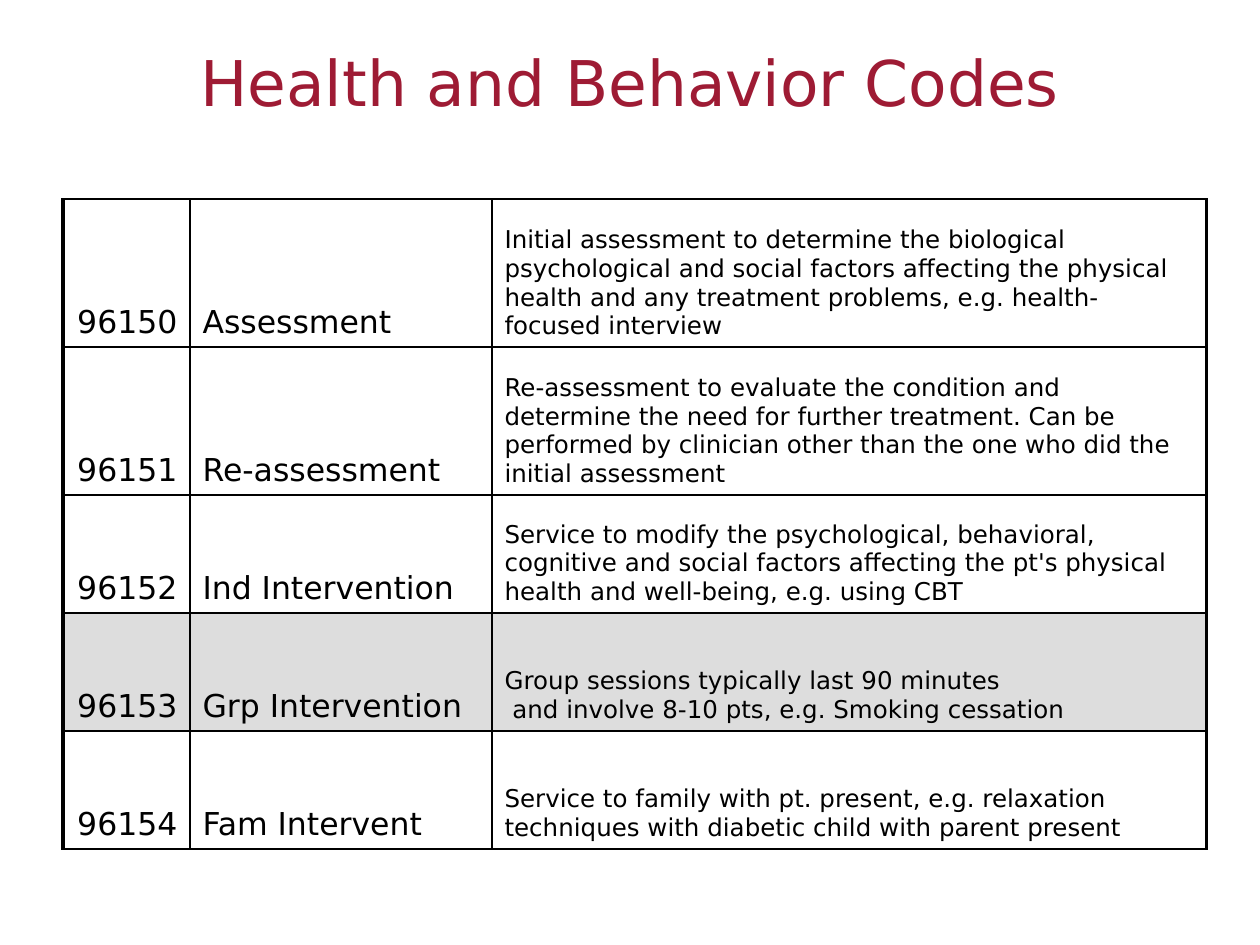
from copy import deepcopy
from dataclasses import dataclass

from lxml import etree
from pptx import Presentation
from pptx.dml.color import RGBColor
from pptx.enum.text import MSO_ANCHOR, PP_ALIGN
from pptx.oxml.ns import qn
from pptx.util import Emu, Pt

LEFT, CENTER, RIGHT = PP_ALIGN.LEFT, PP_ALIGN.CENTER, PP_ALIGN.RIGHT
MIDDLE, BOTTOM = MSO_ANCHOR.MIDDLE, MSO_ANCHOR.BOTTOM
PX = 914400 // 126
TITLE_ONLY = 5


@dataclass(frozen=True)
class Theme:
    font: str = "DejaVu Sans"
    title: str = "9E1B34"
    text: str = "000000"
    border: str = "000000"
    plain: str = "FFFFFF"
    highlight: str = "DDDDDD"
    title_size: int = 36
    title_gap: int = 25
    label_size: int = 18
    detail_size: int = 14
    thin: int = 1
    thick: int = 2


class Deck:
    def __init__(self, theme, width, height):
        self.theme = theme
        self.prs = Presentation()
        self.prs.slide_width = Emu(width * PX)
        self.prs.slide_height = Emu(height * PX)
        self.s = None

    def add_slide(self):
        self.s = self.prs.slides.add_slide(self.prs.slide_layouts[TITLE_ONLY])

    def set_text(self, tf, text, size, color, align):
        p = tf.paragraphs[0]
        p.text = text
        p.alignment = align
        for r in p.runs:
            fmt = {"size": Pt(size), "name": self.theme.font, "bold": False}
            for name, value in fmt.items():
                setattr(r.font, name, value)
            r.font.color.rgb = RGBColor.from_string(color)
        for br in p._p.findall(qn("a:br")):
            br.insert(0, deepcopy(p.runs[0]._r.rPr))
        return p

    def title(self, text, x, y, w, h):
        sp = self.s.shapes.title
        box = {"left": x, "top": y, "width": w, "height": h}
        for name, value in box.items():
            setattr(sp, name, Emu(value * PX))
        tf = sp.text_frame
        fmt = {"margin_left": 0, "margin_top": 0, "margin_right": 0,
               "margin_bottom": 0, "vertical_anchor": MIDDLE, "word_wrap": True}
        for name, value in fmt.items():
            setattr(tf, name, value)
        p = self.set_text(tf, text, self.theme.title_size, self.theme.title, CENTER)
        end = etree.SubElement(p._p, qn("a:endParaRPr"), sz=str(self.theme.title_gap * 100))
        etree.SubElement(end, qn("a:latin"), typeface=self.theme.font)

    def borders(self, cell, widths):
        tcPr = cell._tc.get_or_add_tcPr()
        for side, width in zip("LRTB", widths):
            ln = etree.SubElement(tcPr, qn(f"a:ln{side}"), w=str(Pt(width)))
            fill = etree.SubElement(ln, qn("a:solidFill"))
            etree.SubElement(fill, qn("a:srgbClr"), val=self.theme.border)

    def table(self, rows, x, y, widths, heights, highlighted):
        t = self.theme
        box = [Emu(v * PX) for v in (x, y, sum(widths), sum(heights))]
        tbl = self.s.shapes.add_table(len(rows), len(widths), *box).table
        tbl.first_row = tbl.horz_banding = False
        for col, width in zip(tbl.columns, widths):
            col.width = Emu(width * PX)
        for row, height in zip(tbl.rows, heights):
            row.height = Emu(height * PX)
        columns = [
            (t.label_size, RIGHT, (t.thick, t.thin, t.thin, t.thin)),
            (t.label_size, LEFT, (t.thin, t.thin, t.thin, t.thin)),
            (t.detail_size, LEFT, (t.thin, t.thick, t.thin, t.thin)),
        ]
        for i, row in enumerate(rows):
            color = t.highlight if i == highlighted else t.plain
            for j, (text, (size, align, lines)) in enumerate(zip(row, columns)):
                cell = tbl.cell(i, j)
                cell.vertical_anchor = BOTTOM
                self.set_text(cell.text_frame, text, size, t.text, align)
                self.borders(cell, lines)
                cell.fill.solid()
                cell.fill.fore_color.rgb = RGBColor.from_string(color)


CODES = [
    ("96150", "Assessment",
     "Initial assessment to determine the biological\n"
     "psychological and social factors affecting the physical health and any "
     "treatment problems, e.g. health-focused interview"),
    ("96151", "Re-assessment",
     "Re-assessment to evaluate the condition and determine the need for further "
     "treatment. Can be performed by clinician other than the one who did the "
     "initial assessment"),
    ("96152", "Ind Intervention",
     "Service to modify the psychological, behavioral, cognitive and social factors "
     "affecting the pt's physical health and well-being, e.g. using CBT"),
    ("96153", "Grp Intervention",
     "Group sessions typically last 90 minutes\n"
     " and involve 8-10 pts, e.g. Smoking cessation"),
    ("96154", "Fam Intervent",
     "Service to family with pt. present, e.g. relaxation\n"
     "techniques with diabetic child with parent present"),
]


def main():
    deck = Deck(Theme(), 1260, 945)
    deck.add_slide()
    deck.title("Health and Behavior Codes\n", 63, 57, 1134, 101)
    deck.table(CODES, 63, 199, [127, 302, 715], [148, 148, 118, 118, 118], highlighted=3)
    deck.prs.save("out.pptx")


if __name__ == "__main__":
    main()
